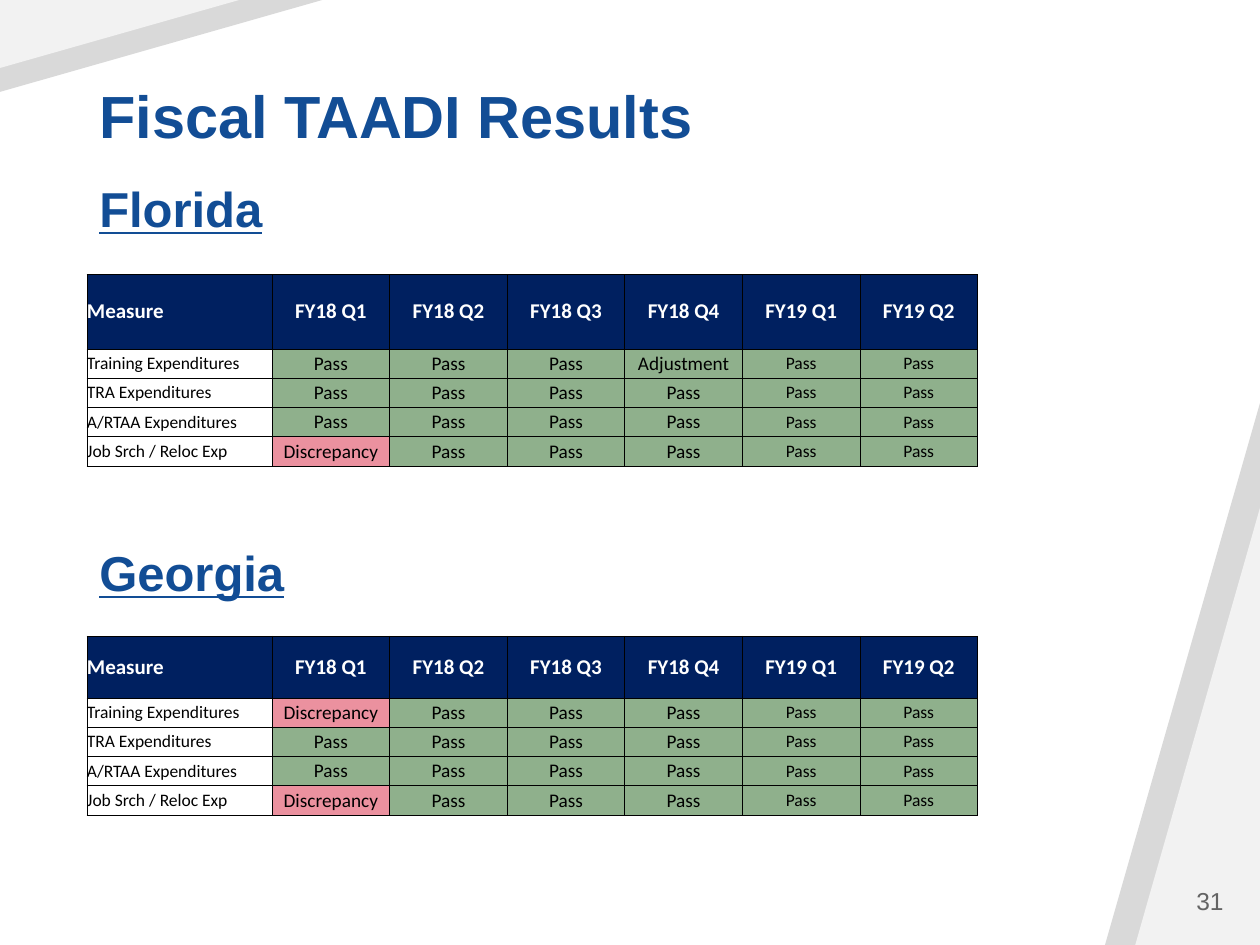
"""Build the slide of fiscal TAADI results for Florida and Georgia."""
import pptx
import pptx.dml.color
import pptx.enum.shapes
import pptx.enum.text
import pptx.oxml
import pptx.oxml.ns
import pptx.util

Inches = pptx.util.Inches
Pt = pptx.util.Pt
ALIGN = pptx.enum.text.PP_ALIGN
ANCHOR = pptx.enum.text.MSO_ANCHOR

COLORS = {
    "title": "124D95", "header": "002060", "pass": "8FB08C",
    "discrepancy": "EB919F", "white": "FFFFFF", "black": "000000",
    "band": "D9D9D9", "corner": "F2F2F2", "number": "646464",
}
SLIDE_WIDTH, SLIDE_HEIGHT = 10, 7.5
LEFT = 0.69
HEADING_WIDTH, HEADING_HEIGHT = 8.7, 1.15
TABLE_WIDTH, MEASURE_WIDTH = 7.07, 1.47
QUARTERS = ["FY18 Q1", "FY18 Q2", "FY18 Q3", "FY18 Q4", "FY19 Q1", "FY19 Q2"]
MEASURES = ["Training Expenditures", "TRA Expenditures",
            "A/RTAA Expenditures", "Job Srch / Reloc Exp"]
STATES = [
    {"name": "Florida", "heading_top": 0.79, "table_top": 2.18,
     "height": 1.52, "header_height": 0.59,
     "exceptions": {(0, 3): "Adjustment", (3, 0): "Discrepancy"}},
    {"name": "Georgia", "heading_top": 3.68, "table_top": 5.05,
     "height": 1.42, "header_height": 0.49,
     "exceptions": {(0, 0): "Discrepancy", (3, 0): "Discrepancy"}},
]


def rgb(name):
    return pptx.dml.color.RGBColor.from_string(COLORS[name])


def format_text(text_frame, font_name, size, color, bold=False,
                underline=None, alignment=ALIGN.LEFT):
    paragraph = text_frame.paragraphs[0]
    paragraph.alignment = alignment
    for run in paragraph.runs:
        run.font.name = font_name
        run.font.size = Pt(size)
        run.font.bold = bold
        run.font.underline = underline
        run.font.color.rgb = rgb(color)


def add_triangle(slide, left, top, width, height, color, turned=False):
    triangle = slide.shapes.add_shape(
        pptx.enum.shapes.MSO_SHAPE.ISOSCELES_TRIANGLE,
        Inches(left), Inches(top), Inches(width), Inches(height))
    triangle.adjustments[0] = 1
    triangle.shadow.inherit = False
    triangle.fill.solid()
    triangle.fill.fore_color.rgb = rgb(color)
    triangle.line.fill.background()
    if turned:
        triangle.rotation = 270
        triangle._element.spPr.xfrm.set("flipV", "1")


def add_corners(slide):
    for width, height, color in [(1.23, 4.3, "band"), (0.99, 3.47, "corner")]:
        add_triangle(slide, SLIDE_WIDTH - width, SLIDE_HEIGHT - height,
                     width, height, color)
    for width, height, color in [(0.73, 2.56, "band"), (0.54, 1.9, "corner")]:
        offset = (height - width) / 2
        add_triangle(slide, offset, -offset, width, height, color, turned=True)


def format_heading(shape, text, size, underline=None):
    text_frame = shape.text_frame
    text_frame.text = text
    text_frame.word_wrap = True
    text_frame.vertical_anchor = ANCHOR.BOTTOM
    text_frame.paragraphs[0].line_spacing = 0.9
    format_text(text_frame, "Arial", size, "title", True, underline)


def place_title(slide):
    title = slide.shapes.title
    title.left, title.top = Inches(LEFT), Inches(0.1)
    title.width, title.height = Inches(HEADING_WIDTH), Inches(HEADING_HEIGHT)
    format_heading(title, "Fiscal TAADI Results", 34)
    title._element.getparent().append(title._element)


def add_state_heading(slide, state):
    heading = slide.shapes.add_textbox(
        Inches(LEFT), Inches(state["heading_top"]),
        Inches(HEADING_WIDTH), Inches(HEADING_HEIGHT))
    format_heading(heading, state["name"], 28, underline=True)


def add_borders(cell):
    properties = cell._tc.get_or_add_tcPr()
    for position, side in enumerate(["lnL", "lnR", "lnT", "lnB"]):
        border = pptx.oxml.parse_xml(
            f'<a:{side} {pptx.oxml.ns.nsdecls("a")} w="{Pt(0.5)}"><a:solidFill>'
            f'<a:srgbClr val="{COLORS["black"]}"/></a:solidFill></a:{side}>')
        properties.insert(position, border)


def fill_cell(cell, text, size, fill, color="black", bold=False,
              alignment=ALIGN.CENTER):
    cell.margin_left = cell.margin_right = 0
    cell.margin_top = cell.margin_bottom = 0
    cell.vertical_anchor = ANCHOR.MIDDLE
    cell.text_frame.text = text
    format_text(cell.text_frame, "Calibri", size, color, bold,
                alignment=alignment)
    if fill:
        cell.fill.solid()
        cell.fill.fore_color.rgb = rgb(fill)
    else:
        cell.fill.background()
    add_borders(cell)


def add_results_table(slide, state):
    table = slide.shapes.add_table(
        len(MEASURES) + 1, len(QUARTERS) + 1, Inches(LEFT),
        Inches(state["table_top"]), Inches(TABLE_WIDTH),
        Inches(state["height"])).table
    quarter_width = (TABLE_WIDTH - MEASURE_WIDTH) / len(QUARTERS)
    row_height = (state["height"] - state["header_height"]) / len(MEASURES)
    for index, column in enumerate(table.columns):
        column.width = Inches(quarter_width if index else MEASURE_WIDTH)
    for index, row in enumerate(table.rows):
        row.height = Inches(row_height if index else state["header_height"])

    for column, text in enumerate(["Measure"] + QUARTERS):
        fill_cell(table.cell(0, column), text, 12, "header", "white", True,
                  ALIGN.CENTER if column else ALIGN.LEFT)
    for row, measure in enumerate(MEASURES):
        fill_cell(table.cell(row + 1, 0), measure, 10, None,
                  alignment=ALIGN.LEFT)
        for column, quarter in enumerate(QUARTERS):
            result = state["exceptions"].get((row, column), "Pass")
            fill = "discrepancy" if result == "Discrepancy" else "pass"
            size = 11 if quarter.startswith("FY18") else 10
            fill_cell(table.cell(row + 1, column + 1), result, size, fill)


def add_page_number(slide):
    box = slide.shapes.add_textbox(
        Inches(8.41), Inches(6.95), Inches(1.4), Inches(0.4))
    box.text_frame.text = "31"
    box.text_frame.word_wrap = True
    box.text_frame.vertical_anchor = ANCHOR.MIDDLE
    format_text(box.text_frame, "Arial", 14, "number", alignment=ALIGN.RIGHT)


def main():
    presentation = pptx.Presentation()
    presentation.slide_width = Inches(SLIDE_WIDTH)
    presentation.slide_height = Inches(SLIDE_HEIGHT)
    slide = presentation.slides.add_slide(presentation.slide_layouts[5])
    add_corners(slide)
    place_title(slide)
    for state in STATES:
        add_state_heading(slide, state)
        add_results_table(slide, state)
    add_page_number(slide)
    presentation.save("out.pptx")


if __name__ == "__main__":
    main()
